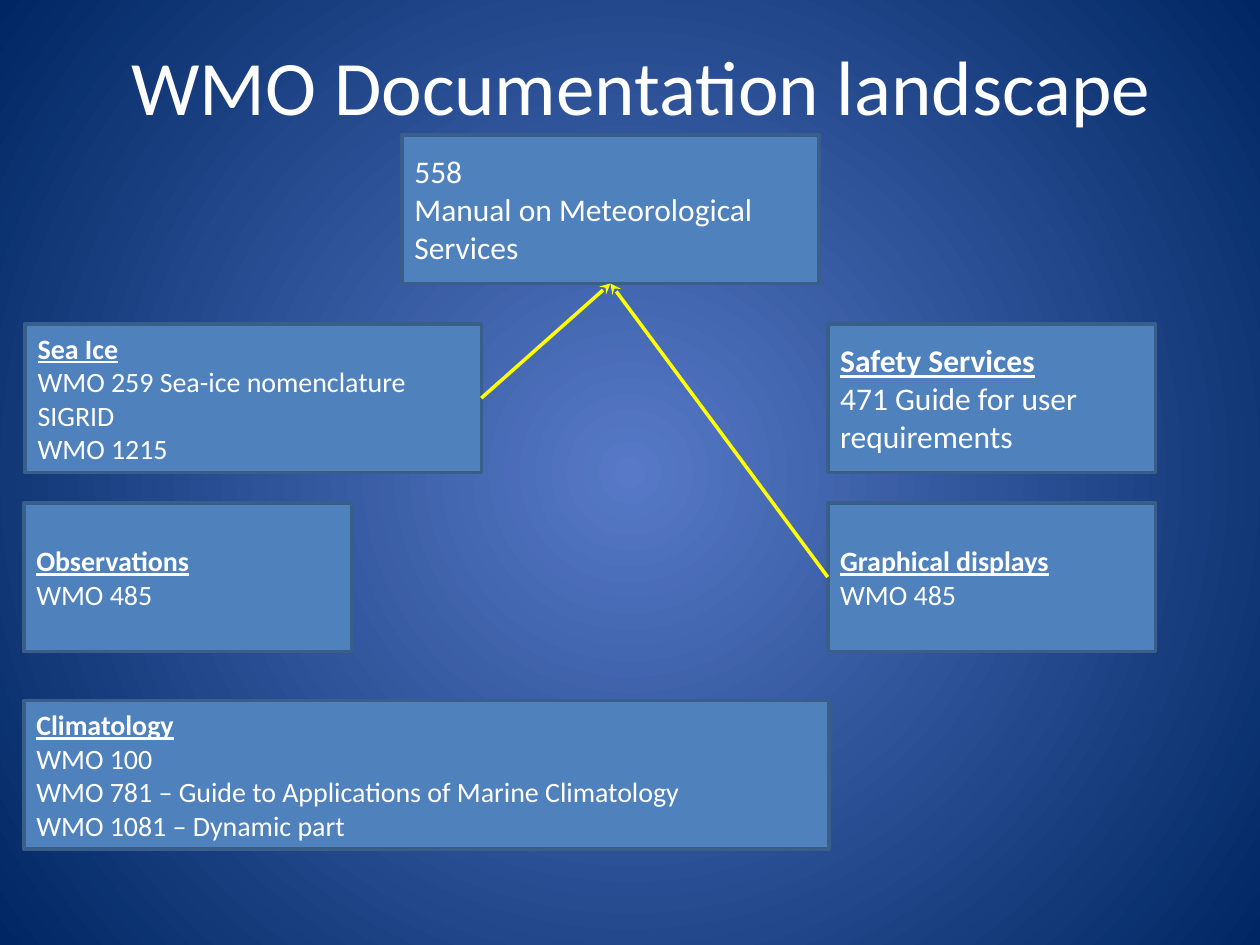
from lxml import etree
from pptx import Presentation
from pptx.dml.color import RGBColor
from pptx.enum.shapes import MSO_CONNECTOR, MSO_SHAPE
from pptx.enum.text import MSO_ANCHOR, MSO_AUTO_SIZE, PP_ALIGN
from pptx.oxml.ns import qn
from pptx.util import Inches, Pt

RECTANGLE, STRAIGHT = MSO_SHAPE.RECTANGLE, MSO_CONNECTOR.STRAIGHT
MIDDLE, NO_FIT = MSO_ANCHOR.MIDDLE, MSO_AUTO_SIZE.NONE
LEFT, CENTER = PP_ALIGN.LEFT, PP_ALIGN.CENTER
SITE_LEFT, SITE_BOTTOM, SITE_RIGHT = 1, 2, 3

# Content: heading, lines, text size, left, row, width
TITLE = "WMO Documentation landscape"
BOXES = {
    "manual": (None, ["558", "Manual on Meteorological Services"], 18, 3.19, 0, 3.31),
    "sea ice": ("Sea Ice", ["WMO 259 Sea-ice nomenclature", "SIGRID", "WMO 1215"],
                16, 0.2, 1, 3.62),
    "climatology": ("Climatology", ["WMO 100",
                    "WMO 781 – Guide to Applications of Marine Climatology",
                    "WMO 1081 – Dynamic part"], 16, 0.19, 3, 6.39),
    "observations": ("Observations", ["WMO 485"], 16, 0.19, 2, 2.6),
    "safety": ("Safety Services", ["471 Guide for user requirements"], 18, 6.57, 1, 2.6),
    "displays": ("Graphical displays", ["WMO 485"], 16, 6.57, 2, 2.6),
}
ARROWS = [("sea ice", SITE_RIGHT), ("displays", SITE_LEFT)]  # all lead to the manual
ROW_TOPS = [1.07, 2.57, 3.99, 5.56]
BOX_HEIGHT = 1.18
BACKGROUND = ["5779C7", "002763"]  # centre, edge


def color(value):
    return RGBColor.from_string(value)


def set_line(line, value):
    line.color.rgb = color(value)
    line.width = Pt(2)


def write(paragraph, text, size, alignment=LEFT, heading=False):
    paragraph.alignment = alignment
    run = paragraph.add_run()
    run.text = text
    formats = {"name": "Calibri", "size": Pt(size), "bold": heading, "underline": heading}
    for name, value in formats.items():
        setattr(run.font, name, value)
    run.font.color.rgb = color("FFFFFF")


def paint_background(slide):
    fill = slide.background.fill
    fill.gradient()
    for stop, value in zip(fill.gradient_stops, BACKGROUND):
        stop.color.rgb = color(value)
    # Radial gradient from the centre of the slide
    linear = next(slide.element.iter(qn("a:lin")))
    radial = etree.Element(qn("a:path"), {"path": "circle"})
    etree.SubElement(radial, qn("a:fillToRect"), {side: "50000" for side in "ltrb"})
    linear.getparent().replace(linear, radial)


def add_box(slide, heading, lines, size, left, row, width):
    place = (Inches(value) for value in (left, ROW_TOPS[row], width, BOX_HEIGHT))
    box = slide.shapes.add_shape(RECTANGLE, *place)
    box.shadow.inherit = False
    box.fill.solid()
    box.fill.fore_color.rgb = color("4F81BD")
    set_line(box.line, "395E89")
    frame = box.text_frame
    frame.word_wrap = True
    frame.vertical_anchor = MIDDLE
    texts = [heading, *lines] if heading else lines
    for index, text in enumerate(texts):
        paragraph = frame.add_paragraph() if index else frame.paragraphs[0]
        write(paragraph, text, size, heading=text == heading)
    return box


def add_arrow(slide, start, site, end):
    arrow = slide.shapes.add_connector(STRAIGHT, 0, 0, 0, 0)
    arrow.begin_connect(start, site)
    arrow.end_connect(end, SITE_BOTTOM)
    set_line(arrow.line, "FFFF00")
    etree.SubElement(arrow.line._get_or_add_ln(), qn("a:tailEnd"), {"type": "stealth"})
    etree.SubElement(arrow._element.spPr, qn("a:effectLst"))


def add_title(slide):
    title = slide.shapes.title
    place = {"left": 0.59, "top": 0.19, "width": 9, "height": 0.97}
    for name, value in place.items():
        setattr(title, name, Inches(value))
    frame = title.text_frame
    frame.auto_size = NO_FIT
    frame.word_wrap = True
    frame.vertical_anchor = MIDDLE
    write(frame.paragraphs[0], TITLE, 44, CENTER)


def main():
    presentation = Presentation()
    presentation.slide_width, presentation.slide_height = Inches(10), Inches(7.5)
    slide = presentation.slides.add_slide(presentation.slide_layouts[5])
    paint_background(slide)
    boxes = {name: add_box(slide, *content) for name, content in BOXES.items()}
    for name, site in ARROWS:
        add_arrow(slide, boxes[name], site, boxes["manual"])
    add_title(slide)
    presentation.save("out.pptx")


if __name__ == "__main__":
    main()
